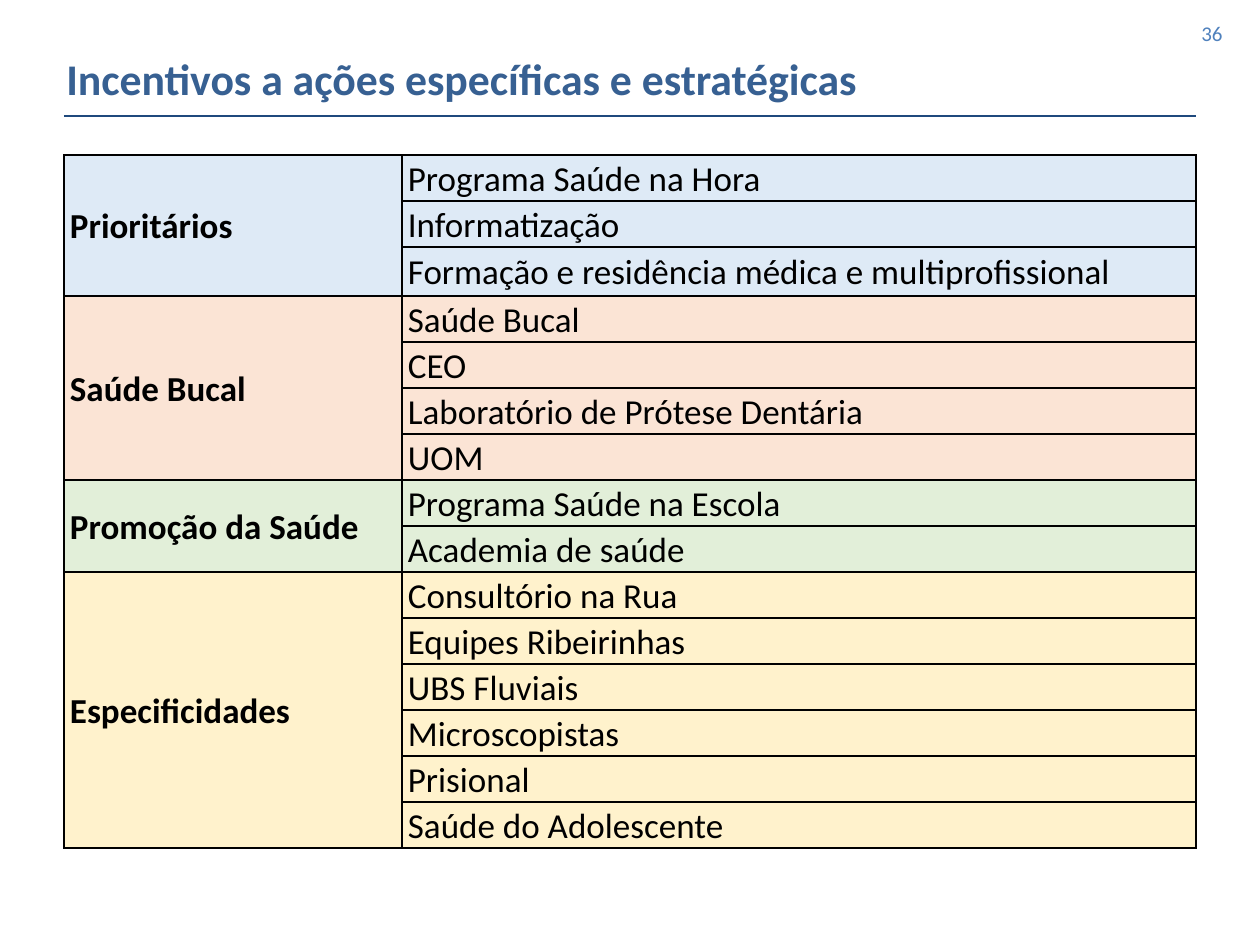
from dataclasses import dataclass

from lxml import etree
from pptx import Presentation
from pptx.dml.color import RGBColor
from pptx.enum.shapes import MSO_CONNECTOR
from pptx.enum.text import MSO_ANCHOR, PP_ALIGN
from pptx.oxml.ns import qn
from pptx.util import Emu, Pt

STRAIGHT = MSO_CONNECTOR.STRAIGHT
MIDDLE = MSO_ANCHOR.MIDDLE
LEFT, RIGHT = PP_ALIGN.LEFT, PP_ALIGN.RIGHT

# Content: group name, fill, incentives
TITLE = "Incentivos a ações específicas e estratégicas"
PAGE_NUMBER = "36"
GROUPS = [
    ("Prioritários", "DEEAF6", [
        "Programa Saúde na Hora",
        "Informatização",
        "Formação e residência médica e multiprofissional",
    ]),
    ("Saúde Bucal", "FBE4D5", [
        "Saúde Bucal", "CEO", "Laboratório de Prótese Dentária", "UOM",
    ]),
    ("Promoção da Saúde", "E2EFD9", [
        "Programa Saúde na Escola", "Academia de saúde",
    ]),
    ("Especificidades", "FFF2CC", [
        "Consultório na Rua", "Equipes Ribeirinhas", "UBS Fluviais",
        "Microscopistas", "Prisional", "Saúde do Adolescente",
    ]),
]


@dataclass(frozen=True)
class Theme:
    font: str = "Calibri"
    title: str = "376092"
    rule: str = "1F497D"
    number: str = "4F81BD"
    ink: str = "000000"
    title_size: int = 25
    table_size: int = 20
    number_size: int = 12
    line_width: int = 1


THEME = Theme()

# Layout in px, 126 to the inch
SLIDE_SIZE = (1260, 945)
TITLE_BOX = (54, 18, 1211, 127)
NUMBER_BOX = (941, 8, 294, 50)
TABLE_LEFT, TABLE_TOP = 64, 155
COLUMN_WIDTHS = (338, 794)
ROW_HEIGHT, TALL_ROW_HEIGHT, TALL_ROW = 46, 49, 2
CELL_MARGIN = 6
RULE_TOP = 116


def px(value):
    return Emu(value * 914400 // 126)


def set_text(text_frame, text, size, color, bold=False, align=LEFT, spacing=1.0):
    text_frame.text = text
    paragraph = text_frame.paragraphs[0]
    paragraph.alignment = align
    paragraph.line_spacing = spacing
    font = paragraph.runs[0].font
    font.name, font.size, font.bold = THEME.font, Pt(size), bold
    font.color.rgb = RGBColor.from_string(color)


def add_text(slide, box, text, size, color, **style):
    text_frame = slide.shapes.add_textbox(*map(px, box)).text_frame
    text_frame.word_wrap = True
    text_frame.vertical_anchor = MIDDLE
    set_text(text_frame, text, size, color, **style)


def style_cell(cell, fill):
    cell.vertical_anchor = MIDDLE
    cell.margin_left = cell.margin_right = px(CELL_MARGIN)
    cell.margin_top = cell.margin_bottom = 0
    properties = cell._tc.get_or_add_tcPr()
    for side in ("a:lnL", "a:lnR", "a:lnT", "a:lnB"):
        border = etree.SubElement(properties, qn(side), w=str(Pt(THEME.line_width)))
        solid = etree.SubElement(border, qn("a:solidFill"))
        etree.SubElement(solid, qn("a:srgbClr"), val=THEME.ink)
    cell.fill.solid()
    cell.fill.fore_color.rgb = RGBColor.from_string(fill)


def add_rule(slide):
    left, right = TABLE_LEFT, TABLE_LEFT + sum(COLUMN_WIDTHS)
    rule = slide.shapes.add_connector(
        STRAIGHT, px(left), px(RULE_TOP), px(right), px(RULE_TOP))
    rule.line.color.rgb = RGBColor.from_string(THEME.rule)
    rule.line.width = Pt(THEME.line_width)
    etree.SubElement(rule._element.spPr, qn("a:effectLst"))


def add_incentive_table(slide):
    row_count = sum(len(items) for _, _, items in GROUPS)
    heights = [ROW_HEIGHT] * row_count
    heights[TALL_ROW] = TALL_ROW_HEIGHT
    table = slide.shapes.add_table(
        row_count, len(COLUMN_WIDTHS), px(TABLE_LEFT), px(TABLE_TOP),
        px(sum(COLUMN_WIDTHS)), px(sum(heights))).table
    table.first_row = table.horz_banding = False
    for column, width in zip(table.columns, COLUMN_WIDTHS):
        column.width = px(width)
    for row, height in zip(table.rows, heights):
        row.height = px(height)

    # Each group name spans the rows of its incentives
    first = 0
    for name, fill, items in GROUPS:
        for row, item in enumerate(items, first):
            for column in range(len(COLUMN_WIDTHS)):
                style_cell(table.cell(row, column), fill)
            set_text(table.cell(row, 1).text_frame, item,
                     THEME.table_size, THEME.ink, spacing=1.07)
        group_cell = table.cell(first, 0)
        group_cell.merge(table.cell(first + len(items) - 1, 0))
        set_text(group_cell.text_frame, name,
                 THEME.table_size, THEME.ink, bold=True, spacing=1.07)
        first += len(items)


def main():
    presentation = Presentation()
    presentation.slide_width, presentation.slide_height = map(px, SLIDE_SIZE)
    slide = presentation.slides.add_slide(presentation.slide_layouts[6])
    add_text(slide, TITLE_BOX, TITLE, THEME.title_size, THEME.title,
             bold=True, spacing=0.9)
    add_rule(slide)
    add_incentive_table(slide)
    add_text(slide, NUMBER_BOX, PAGE_NUMBER, THEME.number_size, THEME.number,
             align=RIGHT)
    presentation.save("out.pptx")


if __name__ == "__main__":
    main()
